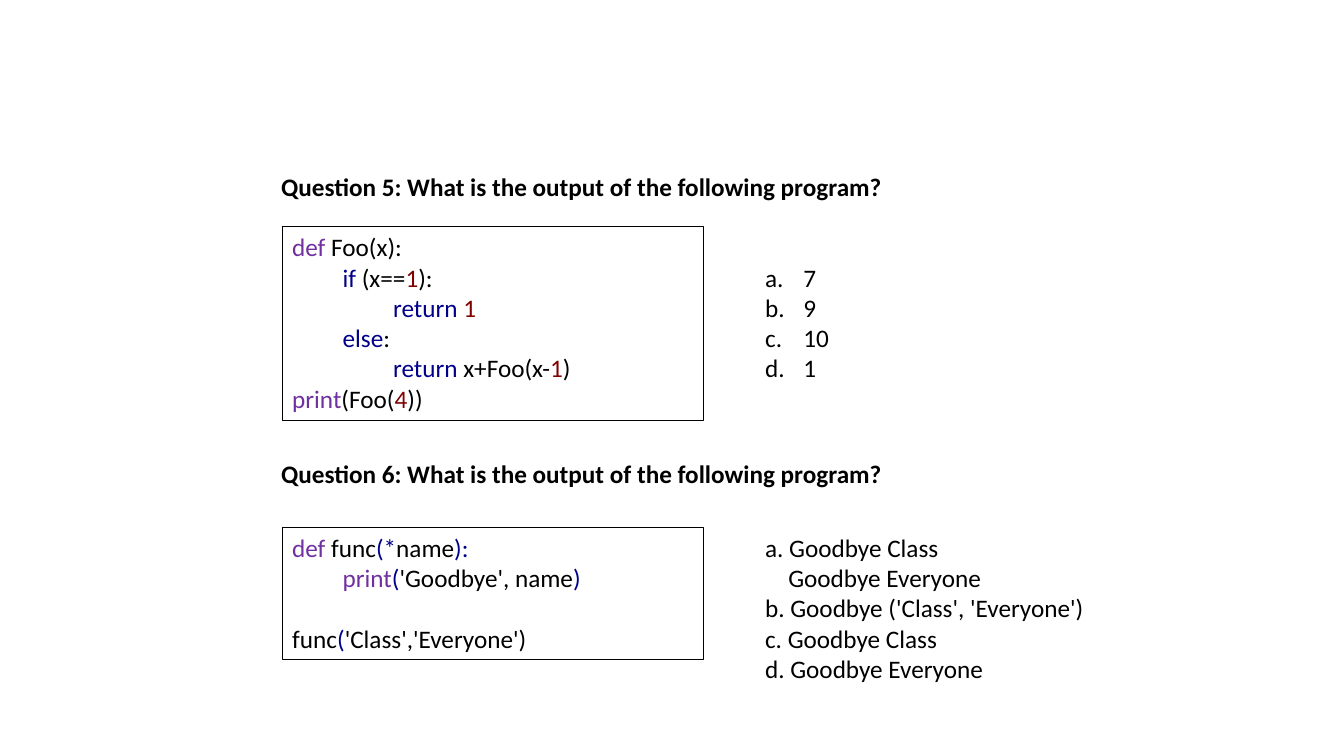
from dataclasses import dataclass

from lxml import etree
from pptx import Presentation
from pptx.dml.color import RGBColor
from pptx.enum.shapes import MSO_SHAPE
from pptx.enum.text import MSO_ANCHOR, PP_ALIGN
from pptx.oxml.ns import qn
from pptx.util import Inches, Pt

RECT = MSO_SHAPE.RECTANGLE
TOP = MSO_ANCHOR.TOP
LEFT = PP_ALIGN.LEFT


@dataclass(frozen=True)
class Theme:
    font: str = "Calibri"
    size: int = 18
    ink: str = "000000"
    call: str = "7030A0"
    key: str = "00008B"
    num: str = "800000"


class Quiz:
    def __init__(self, slide, theme):
        self.slide = slide
        self.theme = theme

    def style(self, run, color, bold=False):
        font = run.font
        font.name = self.theme.font
        font.size = Pt(self.theme.size)
        font.bold = bold
        font.color.rgb = RGBColor.from_string(color)

    def text(self, x, y, w, h, lines, bold=False, wrap=True):
        box = self.slide.shapes.add_textbox(
            Inches(x), Inches(y), Inches(w), Inches(h))
        frame = box.text_frame
        frame.word_wrap = wrap
        frame.text = "\n".join(lines)
        for para in frame.paragraphs:
            for run in para.runs:
                self.style(run, self.theme.ink, bold)
        return frame.paragraphs

    def title(self, y, text):
        self.text(2.69, y, 6.21, 0.4, [text], bold=True, wrap=False)

    def indent(self, para, left, hang=0):
        props = para._p.get_or_add_pPr()
        props.set("marL", str(Inches(left)))
        props.set("indent", str(Inches(-hang)))
        return props

    def letters(self, x, y, w, h, items):
        for para in self.text(x, y, w, h, items):
            props = self.indent(para, 0.38, 0.38)
            etree.SubElement(props, qn("a:buAutoNum"), type="alphaLcPeriod")

    def code(self, y, h, lines):
        """Each line is a list of (color, text); an empty line is a gap."""
        box = self.slide.shapes.add_shape(
            RECT, Inches(2.8), Inches(y), Inches(4.18), Inches(h))
        box.shadow.inherit = False
        box.fill.background()
        box.line.color.rgb = RGBColor.from_string(self.theme.ink)
        box.line.width = Pt(0.75)
        frame = box.text_frame
        frame.word_wrap = True
        frame.vertical_anchor = TOP
        para, gap = frame.paragraphs[0], 0
        for i, line in enumerate(lines):
            if not line:
                gap += 22
                continue
            if i:
                para = frame.add_paragraph()
            para.alignment = LEFT
            if gap:
                para.space_before = Pt(gap)
                gap = 0
            for color, part in line:
                run = para.add_run()
                run.text = part
                self.style(run, color)


def main():
    deck = Presentation()
    deck.slide_width, deck.slide_height = Inches(13.33), Inches(7.5)
    theme = Theme()
    quiz = Quiz(deck.slides.add_slide(deck.slide_layouts[6]), theme)
    ink, call, key, num = theme.ink, theme.call, theme.key, theme.num
    ask = "What is the output of the following program?"

    # Question 5: recursion
    quiz.title(1.65, f"Question 5: {ask}")
    quiz.code(2.25, 1.92, [
        [(call, "def "), (ink, "Foo(x):")],
        [(key, "\tif"), (ink, " (x=="), (num, "1"), (ink, "):")],
        [(key, "\t\treturn "), (num, "1")],
        [(key, "\telse"), (ink, ":")],
        [(key, "\t\treturn "), (ink, "x+Foo(x-"), (num, "1"), (ink, ")")],
        [(call, "print"), (ink, "(Foo("), (num, "4"), (ink, "))")],
    ])
    quiz.letters(7.49, 2.55, 2.09, 1.62, ["7", "9", "10", "1"])

    # Question 6: variable arguments
    quiz.title(4.5, f"Question 6: {ask}")
    quiz.code(5.23, 1.31, [
        [(call, "def "), (ink, "func"), (key, "(*"), (ink, "name"),
         (key, "):")],
        [(call, "\tprint"), (key, "("), (ink, "'Goodbye', name"), (key, ")")],
        [],
        [(ink, "func"), (key, "("), (ink, "'Class','Everyone')")],
    ])
    paras = quiz.text(7.49, 5.23, 3.94, 1.92, [
        "a. Goodbye Class",
        "Goodbye Everyone",
        "b. Goodbye ('Class', 'Everyone')",
        "c. Goodbye Class",
        "d. Goodbye Everyone",
    ])
    quiz.indent(paras[1], 0.23)

    deck.save("out.pptx")


if __name__ == "__main__":
    main()
